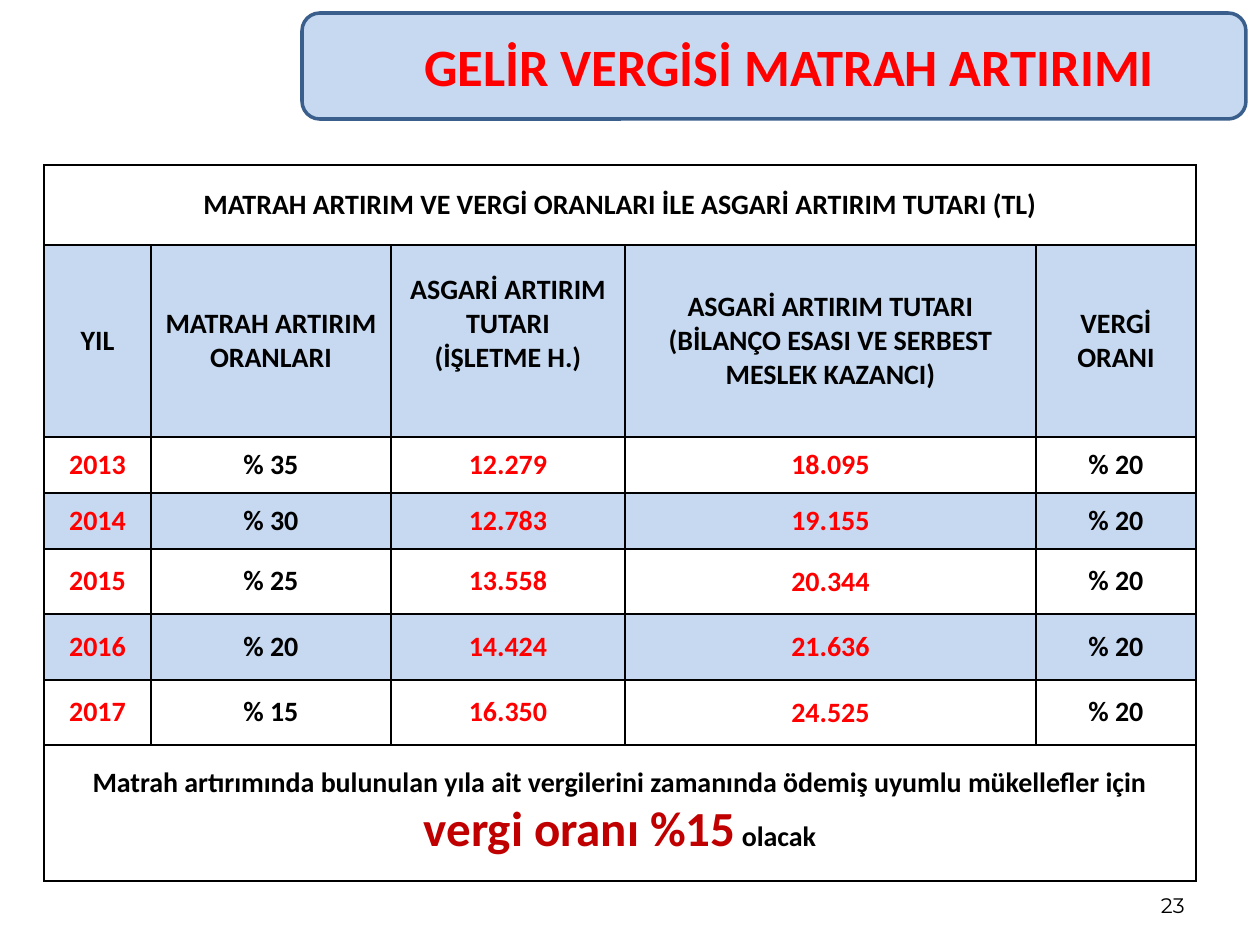
import lxml.etree
import pptx
import pptx.dml.color
import pptx.enum.shapes
import pptx.enum.text
import pptx.oxml.ns
import pptx.util

PX = 914400 // 126
THEME = {
    "font": "Calibri", "number_font": "Montserrat",
    "band": "C6D9F1", "white": "FFFFFF", "outline": "3A5F8C",
    "text": "000000", "red": "FF0000", "dark_red": "C00000",
    "title": 30, "body": 16, "large": 28, "number": 12,
}

TITLE = "GELİR VERGİSİ MATRAH ARTIRIMI"
CAPTION = "MATRAH ARTIRIM VE VERGİ ORANLARI İLE ASGARİ ARTIRIM TUTARI (TL)"
HEADERS = [
    ["YIL"],
    ["MATRAH ARTIRIM ORANLARI"],
    ["ASGARİ ARTIRIM TUTARI", "(İŞLETME H.)"],
    ["ASGARİ ARTIRIM TUTARI", "(BİLANÇO ESASI VE SERBEST MESLEK KAZANCI)"],
    ["VERGİ", "ORANI"],
]
RATES = [
    ("2013", "% 35", "12.279", "18.095", "% 20"),
    ("2014", "% 30", "12.783", "19.155", "% 20"),
    ("2015", "% 25", "13.558", "20.344", "% 20"),
    ("2016", "% 20", "14.424", "21.636", "% 20"),
    ("2017", "% 15", "16.350", "24.525", "% 20"),
]
NOTE = "Matrah artırımında bulunulan yıla ait vergilerini zamanında ödemiş uyumlu mükellefler için"
NOTE_RATE = "vergi oranı %15"
NOTE_END = " olacak"
PAGE_NUMBER = "23"

COLUMNS = [107, 240, 234, 411, 160]
ROWS = [80, 192, 56, 56, 65, 66, 65, 136]
RED_COLUMNS = {0, 2, 3}
AMOUNT_COLUMN = 3
RAISED_COLUMN = 2


def place(*lengths):
    return [length * PX for length in lengths]


def color(name):
    return pptx.dml.color.RGBColor.from_string(THEME[name])


def style(font, size, ink, face="font", bold=True):
    font.name = THEME[face]
    font.size = pptx.util.Pt(THEME[size])
    font.bold = bold
    font.color.rgb = color(ink)


def write(frame, lines, size, ink, face="font", bold=True, align="CENTER"):
    frame.word_wrap = True
    for index, line in enumerate(lines):
        para = frame.add_paragraph() if index else frame.paragraphs[0]
        para.text = line
        para.alignment = pptx.enum.text.PP_ALIGN[align]
        style(para.font, size, ink, face, bold)


def add_borders(cell):
    properties = cell._tc.get_or_add_tcPr()
    qn = pptx.oxml.ns.qn
    for side in ("a:lnL", "a:lnR", "a:lnT", "a:lnB"):
        line = lxml.etree.SubElement(properties, qn(side), w="12700")
        fill = lxml.etree.SubElement(line, qn("a:solidFill"))
        lxml.etree.SubElement(fill, qn("a:srgbClr"), val=THEME["text"])


def add_banner(page):
    banner = page.shapes.add_shape(
        pptx.enum.shapes.MSO_SHAPE.ROUNDED_RECTANGLE, *place(302, 13, 944, 106))
    banner.shadow.inherit = False
    banner.fill.solid()
    banner.fill.fore_color.rgb = color("band")
    banner.line.color.rgb = color("outline")
    banner.line.width = pptx.util.Pt(2)

    title = page.shapes.title
    title.left, title.top, title.width, title.height = place(353, 26, 873, 79)
    title.text_frame.vertical_anchor = pptx.enum.text.MSO_ANCHOR.MIDDLE
    write(title.text_frame, [TITLE], "title", "red")
    banner._element.addnext(title._element)


def add_rates(page):
    frame = page.shapes.add_table(
        len(ROWS), len(COLUMNS), *place(44, 165, sum(COLUMNS), sum(ROWS)))
    table = frame.table
    table.first_row = table.horz_banding = False
    for column, width in zip(table.columns, COLUMNS):
        column.width = width * PX
    for row, height in zip(table.rows, ROWS):
        row.height = height * PX

    last = len(ROWS) - 1
    for row in range(len(ROWS)):
        banded = row % 2 == 1 and row < last
        for column in range(len(COLUMNS)):
            cell = table.cell(row, column)
            add_borders(cell)
            cell.fill.solid()
            cell.fill.fore_color.rgb = color("band" if banded else "white")
            cell.vertical_anchor = pptx.enum.text.MSO_ANCHOR.MIDDLE

    for row in (0, last):
        table.cell(row, 0).merge(table.cell(row, len(COLUMNS) - 1))
    write(table.cell(0, 0).text_frame, [CAPTION], "body", "text")

    for column, lines in enumerate(HEADERS):
        write(table.cell(1, column).text_frame, lines, "body", "text")
    table.cell(1, RAISED_COLUMN).margin_bottom = 40 * PX

    for row, values in enumerate(RATES, 2):
        for column, value in enumerate(values):
            ink = "red" if column in RED_COLUMNS else "text"
            write(table.cell(row, column).text_frame, [value], "body", ink)
        amount = table.cell(row, AMOUNT_COLUMN)
        amount.margin_left = amount.margin_right = amount.margin_top = PX
        amount.margin_bottom = 0

    note = table.cell(last, 0).text_frame
    write(note, [NOTE, ""], "body", "text")
    para = note.paragraphs[1]
    for text, size, ink in ((NOTE_RATE, "large", "dark_red"), (NOTE_END, "body", "text")):
        span = para.add_run()
        span.text = text
        style(span.font, size, ink)


def add_page_number(page):
    box = page.shapes.add_textbox(*place(903, 861, 294, 63))
    box.text_frame.vertical_anchor = pptx.enum.text.MSO_ANCHOR.BOTTOM
    write(box.text_frame, [PAGE_NUMBER], "number", "text", "number_font", False, "RIGHT")


def main():
    deck = pptx.Presentation()
    deck.slide_width, deck.slide_height = place(1260, 945)
    page = deck.slides.add_slide(deck.slide_layouts.get_by_name("Title Only"))
    add_banner(page)
    add_rates(page)
    add_page_number(page)
    deck.save("out.pptx")


if __name__ == "__main__":
    main()
